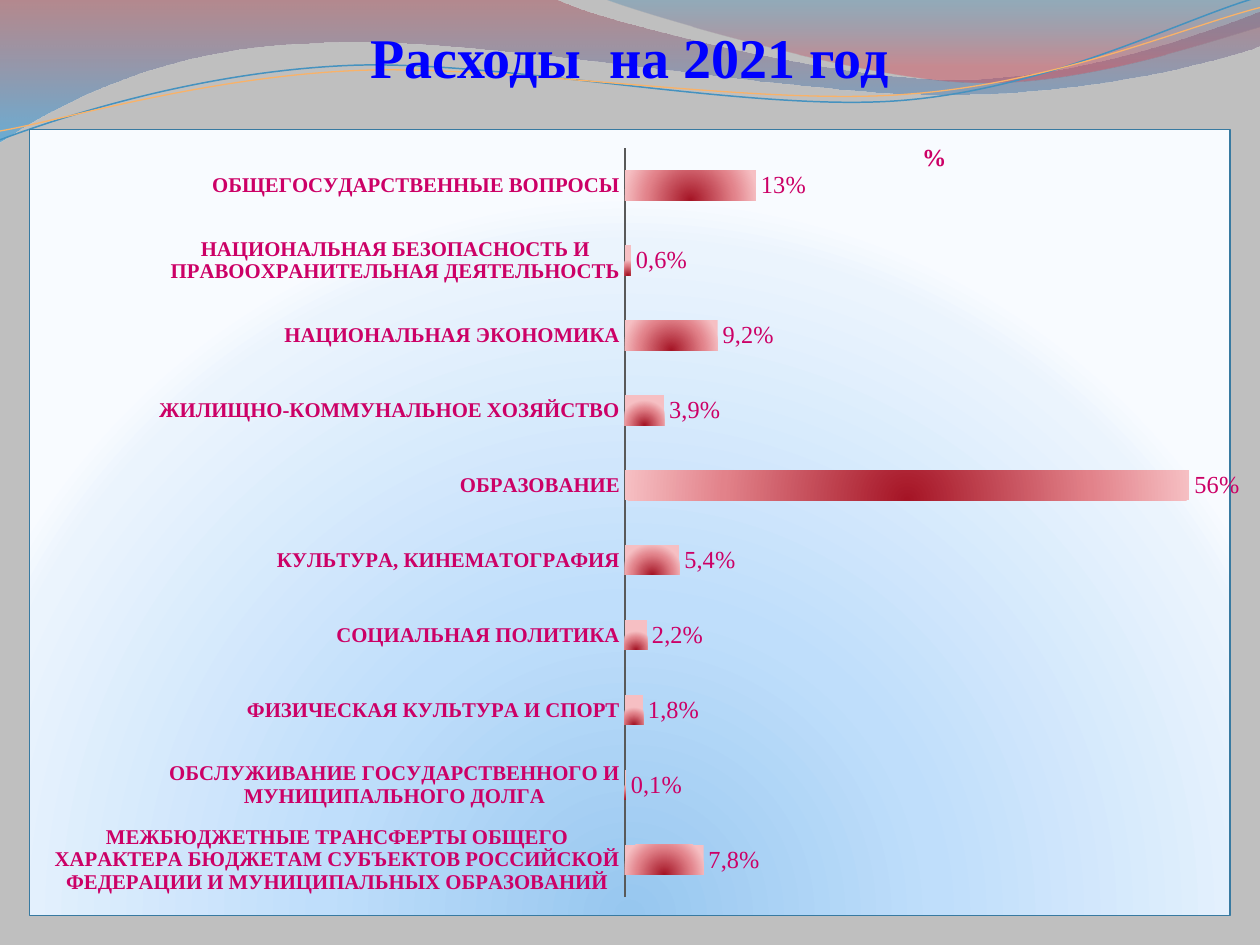
"""Build a slide with a bar chart of 2021 budget expenditure by section."""
from lxml.etree import Element, SubElement
from pptx import Presentation
from pptx.chart.data import CategoryChartData
from pptx.dml.color import RGBColor
from pptx.enum.chart import XL_CHART_TYPE as ChartType, XL_LABEL_POSITION as LabelPos, XL_TICK_MARK as Tick
from pptx.enum.text import MSO_ANCHOR as Anchor, PP_ALIGN as Align
from pptx.oxml import parse_xml
from pptx.oxml.ns import nsdecls, qn
from pptx.util import Inches, Pt

FONT = "Times New Roman"
COLORS = {
    "page": "BFBFBF", "title": "0000FF", "text": "CC0066", "axis": "595959",
    "frame": "387AA1", "blue_line": "4592BF", "orange_line": "F9B268",
}
TITLE = "Расходы  на 2021 год"
CHART_TITLE = "%"
EXPENSES = [
    ("МЕЖБЮДЖЕТНЫЕ ТРАНСФЕРТЫ ОБЩЕГО ХАРАКТЕРА БЮДЖЕТАМ СУБЪЕКТОВ "
     "РОССИЙСКОЙ ФЕДЕРАЦИИ И МУНИЦИПАЛЬНЫХ ОБРАЗОВАНИЙ", 0.078, "7,8%"),
    ("ОБСЛУЖИВАНИЕ ГОСУДАРСТВЕННОГО И МУНИЦИПАЛЬНОГО ДОЛГА", 0.001, "0,1%"),
    ("ФИЗИЧЕСКАЯ КУЛЬТУРА И СПОРТ", 0.018, "1,8%"),
    ("СОЦИАЛЬНАЯ ПОЛИТИКА", 0.022, "2,2%"),
    ("КУЛЬТУРА, КИНЕМАТОГРАФИЯ", 0.054, "5,4%"),
    ("ОБРАЗОВАНИЕ", 0.56, "56%"),
    ("ЖИЛИЩНО-КОММУНАЛЬНОЕ ХОЗЯЙСТВО", 0.039, "3,9%"),
    ("НАЦИОНАЛЬНАЯ ЭКОНОМИКА", 0.092, "9,2%"),
    ("НАЦИОНАЛЬНАЯ БЕЗОПАСНОСТЬ И ПРАВООХРАНИТЕЛЬНАЯ ДЕЯТЕЛЬНОСТЬ", 0.006, "0,6%"),
    ("ОБЩЕГОСУДАРСТВЕННЫЕ ВОПРОСЫ", 0.13, "13%"),
]
LOWERED_SECTION = "СОЦИАЛЬНАЯ ПОЛИТИКА"

LEFT_WAVE = [(0, 0), (4.4, -0.01), (4.76, 0.17, 6.64, 0.63, 7.58, 0.63),
             (8.53, 0.63, 9.58, 0.26, 10, 0.09), (10.01, 0.36),
             (9.83, 0.44, 8.7, 0.76, 7.46, 0.75), (6.22, 0.75, 3.82, 0.28, 2.57, 0.34),
             (1.29, 0.36, 0.46, 0.83, -0.01, 1.13), (0, 0)]
RIGHT_WAVE = [(4.79, -0.01), (5.09, 0.11, 6.82, 0.62, 7.69, 0.65),
              (8.56, 0.69, 9.61, 0.32, 10, 0.21), (10, 0), (4.79, -0.01)]
BLUE_CURVE = [(0, 1.11), (0.48, 0.93, 1.58, 0.57, 2.77, 0.52),
              (3.95, 0.47, 5.93, 0.89, 7.13, 0.8), (8.33, 0.71, 9.38, 0.15, 9.98, -0.02)]
ORANGE_CURVE = [(0, 1.04), (0.47, 0.96, 1.64, 0.61, 2.83, 0.56),
                (4.03, 0.51, 5.97, 0.84, 7.17, 0.75), (8.36, 0.67, 9.41, 0.21, 10, 0.06)]
WAVES = [
    (LEFT_WAVE, [(0, "A84752", 45), (100, "249FE6", 55)]),
    (RIGHT_WAVE, [(0, "2A7EAF", 30), (80, "D24B5A", 45)]),
]
CURVES = [(BLUE_CURVE, "blue_line", 0.85), (ORANGE_CURVE, "orange_line", 0.75)]
CHART_GLOW = [(0, "97C7EF", 100), (43, "BFDEFB", 100), (93, "EBF4FD", 100), (100, "F8FBFF", 100)]
BAR_GLOW = [(0, "A51425", 100), (65, "E2828A", 100), (100, "F6BFC3", 100)]


def rgb(name):
    return RGBColor.from_string(COLORS[name])


def gradient(stops, center_y=None):
    """Return a downward gradient, or a circular one around center_y percent."""
    fill = parse_xml(f'<a:gradFill {nsdecls("a")} rotWithShape="1"><a:gsLst/></a:gradFill>')
    for position, color, opacity in stops:
        stop = SubElement(fill[0], qn("a:gs"), pos=str(position * 1000))
        tint = SubElement(stop, qn("a:srgbClr"), val=color)
        if opacity < 100:
            SubElement(tint, qn("a:alpha"), val=str(opacity * 1000))
    if center_y is None:
        SubElement(fill, qn("a:lin"), ang="5400000", scaled="0")
    else:
        circle = SubElement(fill, qn("a:path"), path="circle")
        SubElement(circle, qn("a:fillToRect"), l="50000", r="50000",
                   t=str(center_y * 1000), b=str((100 - center_y) * 1000))
    return fill


def swap_fill(properties, fill):
    properties.replace(properties.find(qn("a:solidFill")), fill)


def add_outline(slide, outline, close):
    """Add a freeform whose six-number segments are cubic curves."""
    start, *segments = outline
    ends = [(Inches(segment[-2]), Inches(segment[-1])) for segment in segments]
    builder = slide.shapes.build_freeform(Inches(start[0]), Inches(start[1]))
    builder.add_line_segments(ends, close=close)
    shape = builder.convert_to_shape()
    shape.shadow.inherit = False
    for line, segment in zip(shape.element.xpath(".//a:lnTo"), segments):
        if len(segment) == 6:
            curve = Element(qn("a:cubicBezTo"))
            for x, y in zip(segment[::2], segment[1::2]):
                SubElement(curve, qn("a:pt"), x=str(Inches(x) - shape.left), y=str(Inches(y) - shape.top))
            line.getparent().replace(line, curve)
    return shape


def add_header(slide):
    for outline, stops in WAVES:
        wave = add_outline(slide, outline, True)
        wave.line.fill.background()
        wave.fill.solid()
        swap_fill(wave.element.spPr, gradient(stops))
    for outline, color, width in CURVES:
        curve = add_outline(slide, outline, False)
        curve.fill.background()
        curve.line.color.rgb = rgb(color)
        curve.line.width = Pt(width)


def style(font, size, color, bold):
    font.name, font.size, font.bold = FONT, Pt(size), bold
    font.color.rgb = rgb(color)


def add_title(slide):
    frame = slide.shapes.add_textbox(0, Inches(0.24), Inches(10), Inches(0.47)).text_frame
    frame.word_wrap = True
    frame.vertical_anchor = Anchor.BOTTOM
    frame.margin_left = frame.margin_right = frame.margin_bottom = 0
    heading = frame.paragraphs[0]
    heading.alignment = Align.CENTER
    run = heading.add_run()
    run.text = TITLE
    style(run.font, 32, "title", True)


def set_layout(parent, index, **places):
    """Give a chart part a manual layout as its child at index."""
    old = parent.find(qn("c:layout"))
    if old is not None:
        parent.remove(old)
    layout = parse_xml(f'<c:layout {nsdecls("c")}><c:manualLayout/></c:layout>')
    for name, value in places.items():
        SubElement(layout[0], qn(f"c:{name}"), val=str(value))
    parent.insert(index, layout)


def add_labels(bars):
    values = bars.data_labels
    values.show_value = True
    values.number_format, values.number_format_is_linked = "0.0%", False
    values.position = LabelPos.OUTSIDE_END
    style(values.font, 14, "text", False)
    for index, (section, _, label) in enumerate(EXPENSES):
        caption = bars.points[index].data_label
        line = caption.text_frame.paragraphs[0]
        if section == LOWERED_SECTION:
            line.add_line_break()
        run = line.add_run()
        run.text = label
        style(run.font, 14, "text", False)
        caption.position = LabelPos.OUTSIDE_END


def add_expense_chart(slide):
    data = CategoryChartData(number_format="0.0%")
    names, shares, _ = zip(*EXPENSES)
    data.categories = names
    data.add_series(CHART_TITLE, shares)
    chart = slide.shapes.add_chart(ChartType.BAR_CLUSTERED, Inches(0.23), Inches(1.02),
                                   Inches(9.61), Inches(6.25), data).chart
    style(chart.font, 12, "text", True)
    chart.has_legend = False

    chart.has_title = True
    run = chart.chart_title.text_frame.paragraphs[0].add_run()
    run.text = CHART_TITLE
    style(run.font, 14, "text", True)
    chart.chart_title.include_in_layout = False

    sections, scale = chart.category_axis, chart.value_axis
    sections.major_tick_mark = sections.minor_tick_mark = Tick.NONE
    sections.format.line.color.rgb = rgb("axis")
    style(sections.tick_labels.font, 12, "text", True)
    scale.minimum_scale, scale.maximum_scale = 0, 0.6
    scale.has_major_gridlines = False
    scale.tick_labels.number_format, scale.tick_labels.number_format_is_linked = "0.0%", False
    scale.visible = False

    plot = chart.plots[0]
    plot.gap_width, plot.overlap, plot.vary_by_categories = 150, -25, False
    bars = plot.series[0]
    bars.format.fill.solid()
    add_labels(bars)

    root = chart.element
    swap_fill(root.xpath(".//c:ser/c:spPr")[0], gradient(BAR_GLOW, 100))
    set_layout(root.xpath(".//c:plotArea")[0], 0, layoutTarget="inner", xMode="edge",
               yMode="edge", x=0.496, y=0.024, w=0.504, h=0.953)
    set_layout(root.xpath("./c:chart/c:title")[0], 1, xMode="edge", yMode="edge", x=0.74, y=0.01)
    frame = parse_xml(
        f'<c:spPr {nsdecls("c", "a")}><a:ln w="9525"><a:solidFill>'
        f'<a:srgbClr val="{COLORS["frame"]}"/></a:solidFill></a:ln></c:spPr>')
    frame.insert(0, gradient(CHART_GLOW, 130))
    root.find(qn("c:chart")).addnext(frame)


def main():
    deck = Presentation()
    deck.slide_width, deck.slide_height = Inches(10), Inches(7.5)
    slide = deck.slides.add_slide(deck.slide_layouts[6])
    slide.background.fill.solid()
    slide.background.fill.fore_color.rgb = rgb("page")
    add_header(slide)
    add_title(slide)
    add_expense_chart(slide)
    deck.save("out.pptx")


if __name__ == "__main__":
    main()
